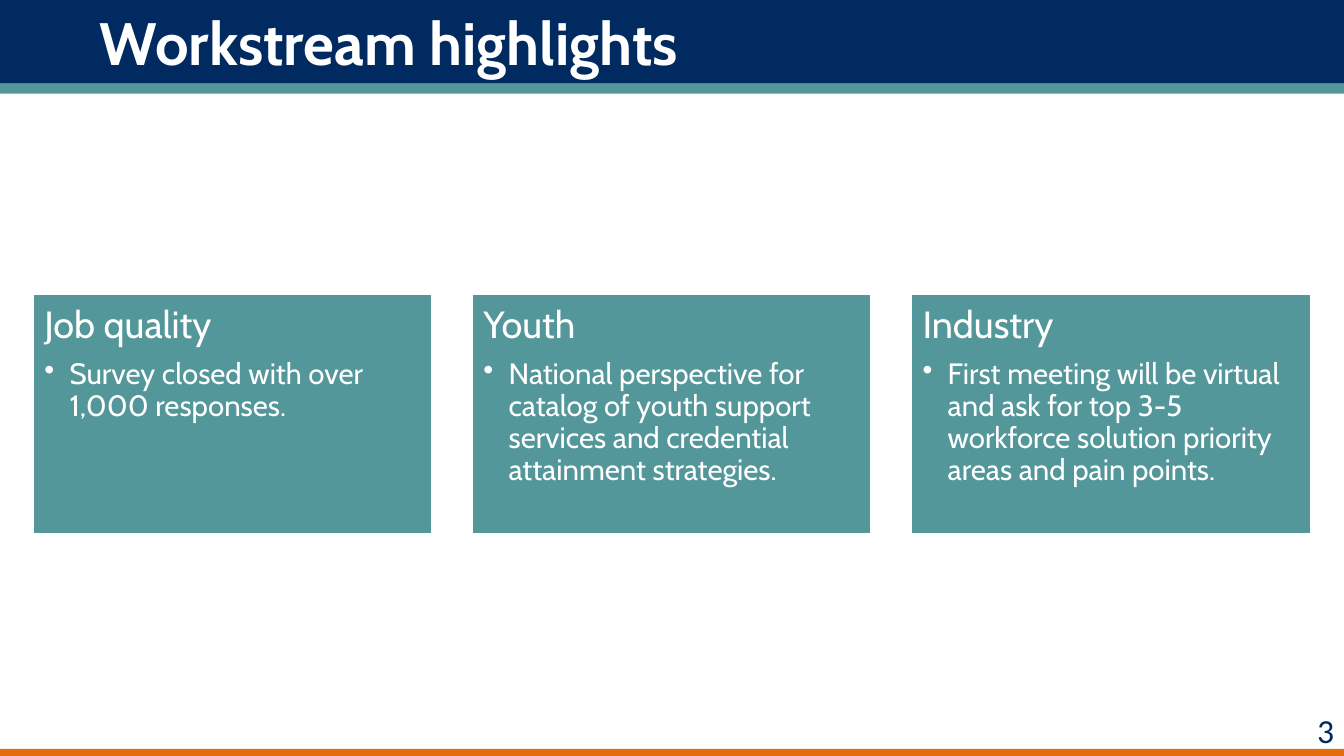
from lxml.etree import SubElement
from pptx import Presentation
from pptx.dml.color import RGBColor
from pptx.enum.shapes import MSO_SHAPE
from pptx.enum.text import MSO_ANCHOR, MSO_AUTO_SIZE, PP_ALIGN
from pptx.oxml.ns import qn
from pptx.util import Emu, Pt

EMU_PER_PX = 9144  # 100 px to the inch
SLIDE_W, SLIDE_H = 1333, 750
NAVY, TEAL, ORANGE, WHITE = "012A60", "54979A", "E46C0A", "FFFFFF"

CARDS = [
    ("Job quality", "Survey closed with over 1,000 responses."),
    ("Youth", "National perspective for catalog of youth support services "
              "and credential attainment strategies."),
    ("Industry", "First meeting will be virtual and ask for top 3-5 "
                 "workforce solution priority areas and pain points."),
]


def px(n):
    return Emu(round(n * EMU_PER_PX))


def rgb(value):
    return RGBColor.from_string(value)


def add_rect(s, x, y, w, h, fill, line=None):
    sp = s.shapes.add_shape(MSO_SHAPE.RECTANGLE, px(x), px(y), px(w), px(h))
    sp.shadow.inherit = False
    sp.fill.solid()
    sp.fill.fore_color.rgb = rgb(fill)
    if line:
        sp.line.color.rgb = rgb(line)
        sp.line.width = Pt(1.5)
    else:
        sp.line.fill.background()
    return sp


def add_run(p, text, size, color, font="Cabin", bold=False):
    r = p.add_run()
    r.text = text
    r.font.name, r.font.size, r.font.bold = font, Pt(size), bold
    r.font.color.rgb = rgb(color)


def set_bullet(p, indent):
    pPr = p._p.get_or_add_pPr()
    pPr.set("marL", str(px(indent)))
    pPr.set("indent", str(px(-indent)))
    SubElement(pPr, qn("a:buChar")).set("char", "•")


def add_header(s, x, y, w, h):
    # Navy band, teal rule below it, title on top
    add_rect(s, x, y, w, h, NAVY)
    add_rect(s, x, y + h, w, 10, TEAL)
    title = s.shapes.title
    title.left, title.top = px(x + 89), px(y)
    title.width, title.height = px(w - 140), px(h)
    s.shapes._spTree.append(title._element)
    tf = title.text_frame
    tf.auto_size = MSO_AUTO_SIZE.NONE
    tf.vertical_anchor = MSO_ANCHOR.MIDDLE
    p = tf.paragraphs[0]
    p.alignment = PP_ALIGN.LEFT
    add_run(p, "Workstream highlights", 42.7, WHITE, bold=True)


def add_footer(s, x, y, w, h):
    # Slide number above the orange rule
    box = s.shapes.add_textbox(px(x + w - 78), px(y), px(78), px(50))
    box.text_frame.word_wrap = True
    p = box.text_frame.paragraphs[0]
    p.alignment = PP_ALIGN.RIGHT
    add_run(p, "3", 24, NAVY, font="Calibri")
    add_rect(s, x, y + h - 7, w, 7, ORANGE)


def add_card(s, x, y, w, h, heading, detail):
    tf = add_rect(s, x, y, w, h, TEAL, line=WHITE).text_frame
    tf.word_wrap = True
    tf.vertical_anchor = MSO_ANCHOR.TOP
    tf.margin_left = tf.margin_right = tf.margin_top = tf.margin_bottom = px(11)

    lines = [(tf.paragraphs[0], heading, 27, 0.35),
             (tf.add_paragraph(), detail, 21, 0.15)]
    for p, text, size, gap in lines:
        p.alignment = PP_ALIGN.LEFT
        p.line_spacing = 0.9
        p.space_after = Pt(size * gap)
        add_run(p, text, size, WHITE)
    p.level = 1
    set_bullet(p, 25)


def add_card_row(s, x, y, w, h):
    # Equal cards spread from edge to edge
    card_w = 396
    step = (w - card_w) / (len(CARDS) - 1)
    for i, (heading, detail) in enumerate(CARDS):
        add_card(s, x + i * step, y, card_w, h, heading, detail)


def main():
    prs = Presentation()
    prs.slide_width, prs.slide_height = px(SLIDE_W), px(SLIDE_H)
    s = prs.slides.add_slide(prs.slide_layouts[5])
    add_header(s, 0, 0, SLIDE_W, 83)
    add_footer(s, 0, 699, SLIDE_W, 51)
    add_card_row(s, 33, 292, 1267, 238)
    prs.save("out.pptx")


if __name__ == "__main__":
    main()
